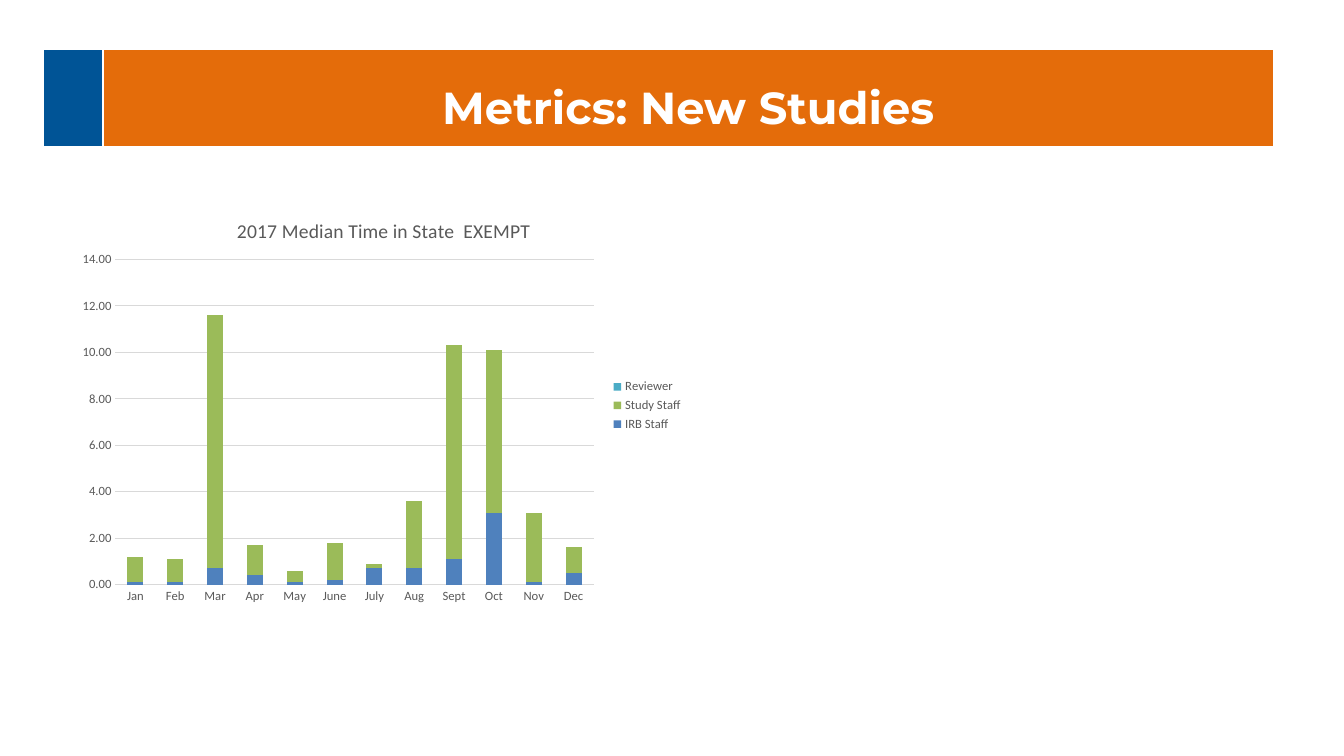
import pptx
import pptx.chart.data
import pptx.dml.color
import pptx.enum.chart
import pptx.enum.text
import pptx.oxml
import pptx.oxml.ns
import pptx.util

PX = 914400 / 100.8
COLORS = {
    "white": "FFFFFF", "navy": "005496", "orange": "E46C0A", "text": "595959",
    "grid": "D9D9D9", "blue": "4F81BD", "green": "9BBB59", "teal": "4BACC6",
}
MONTHS = ["Jan", "Feb", "Mar", "Apr", "May", "June",
          "July", "Aug", "Sept", "Oct", "Nov", "Dec"]
SERIES = [
    ("IRB Staff", "blue", [0.1, 0.1, 0.7, 0.4, 0.1, 0.2, 0.7, 0.7, 1.1, 3.1, 0.1, 0.5]),
    ("Study Staff", "green", [1.1, 1, 10.9, 1.3, 0.5, 1.6, 0.2, 2.9, 9.2, 7, 3, 1.1]),
    ("Reviewer", "teal", [0] * 12),
]


def px(length):
    return pptx.util.Emu(round(length * PX))


def rgb(name):
    return pptx.dml.color.RGBColor.from_string(COLORS[name])


def style_font(font, name, size, color, bold=False):
    font.name, font.size, font.bold = name, pptx.util.Pt(size), bold
    font.color.rgb = rgb(color)


def fill_cell(cell, color):
    """Give the cell its fill and white borders, the lowest one thicker."""
    cell.fill.solid()
    cell.fill.fore_color.rgb = rgb(color)
    properties = cell._tc.get_or_add_tcPr()
    for index, (side, points) in enumerate([("L", 1), ("R", 1), ("T", 1), ("B", 3)]):
        border = pptx.oxml.parse_xml(
            f'<a:ln{side} {pptx.oxml.ns.nsdecls("a")} w="{pptx.util.Pt(points)}">'
            f'<a:solidFill><a:srgbClr val="{COLORS["white"]}"/></a:solidFill></a:ln{side}>')
        properties.insert(index, border)


def add_banner(slide, box, accent_width, title):
    left, top, width, height = map(px, box)
    table = slide.shapes.add_table(1, 2, left, top, width, height).table
    table.first_row = table.horz_banding = False
    table.columns[0].width = px(accent_width)
    table.columns[1].width = width - px(accent_width)
    for cell, color in zip(table.rows[0].cells, ["navy", "orange"]):
        fill_cell(cell, color)
    title_cell = table.cell(0, 1)
    title_cell.text_frame.text = title
    para = title_cell.text_frame.paragraphs[0]
    para.alignment = pptx.enum.text.PP_ALIGN.CENTER
    para.line_spacing = 1.5
    style_font(para.runs[0].font, "Montserrat", 32, "white", bold=True)


def set_layout(element, target, **fractions):
    """Place a chart part by fractions of the chart's size."""
    for old in element.findall(pptx.oxml.ns.qn("c:layout")):
        element.remove(old)
    inner = f'<c:layoutTarget val="{target}"/>' if target else ""
    modes = '<c:xMode val="edge"/><c:yMode val="edge"/>'
    sizes = "".join(f'<c:{key} val="{value}"/>' for key, value in fractions.items())
    layout = pptx.oxml.parse_xml(
        f'<c:layout {pptx.oxml.ns.nsdecls("c")}><c:manualLayout>'
        f'{inner}{modes}{sizes}</c:manualLayout></c:layout>')
    text = element.find(pptx.oxml.ns.qn("c:tx"))
    element.insert(0 if text is None else 1, layout)


def style_axes(chart):
    for axis in (chart.category_axis, chart.value_axis):
        axis.major_tick_mark = pptx.enum.chart.XL_TICK_MARK.NONE
        axis.minor_tick_mark = pptx.enum.chart.XL_TICK_MARK.NONE
        style_font(axis.tick_labels.font, "Calibri", 9, "text")
    values = chart.value_axis
    values.minimum_scale, values.maximum_scale, values.major_unit = 0, 14, 2
    values.tick_labels.number_format = "0.00"
    values.tick_labels.number_format_is_linked = False
    values.format.line.fill.background()
    for line in (chart.category_axis.format.line, values.major_gridlines.format.line):
        line.color.rgb = rgb("grid")
        line.width = pptx.util.Pt(0.75)


def add_time_chart(slide, box, title):
    data = pptx.chart.data.CategoryChartData(number_format="0.00")
    data.categories = MONTHS
    for name, _, values in SERIES:
        data.add_series(name, values)
    chart = slide.shapes.add_chart(
        pptx.enum.chart.XL_CHART_TYPE.COLUMN_STACKED, *map(px, box), data).chart
    style_font(chart.font, "Calibri", 10, "text")

    chart.has_title = True
    chart.chart_title.text_frame.text = title
    run = chart.chart_title.text_frame.paragraphs[0].runs[0]
    style_font(run.font, "Calibri", 14, "text")
    set_layout(chart.chart_title._element, None, x=0.26, y=0.04)

    chart.has_legend = True
    chart.legend.position = pptx.enum.chart.XL_LEGEND_POSITION.RIGHT
    chart.legend.include_in_layout = False
    style_font(chart.legend.font, "Calibri", 9, "text")

    style_axes(chart)
    plot = chart.plots[0]
    plot.gap_width, plot.overlap, plot.vary_by_categories = 150, 100, False
    for series, (_, color, _) in zip(plot.series, SERIES):
        series.format.fill.solid()
        series.format.fill.fore_color.rgb = rgb(color)
    plot_area = chart._chartSpace.chart.plotArea
    set_layout(plot_area, "inner", x=0.07, y=0.15, w=0.77, h=0.78)


def main():
    deck = pptx.Presentation()
    deck.slide_width, deck.slide_height = px(1344), px(756)
    slide = deck.slides.add_slide(deck.slide_layouts[6])
    add_banner(slide, (43, 49, 1231, 99), 60, "Metrics: New Studies")
    add_time_chart(slide, (72, 197, 621, 417), "2017 Median Time in State  EXEMPT")
    deck.save("out.pptx")


if __name__ == "__main__":
    main()
